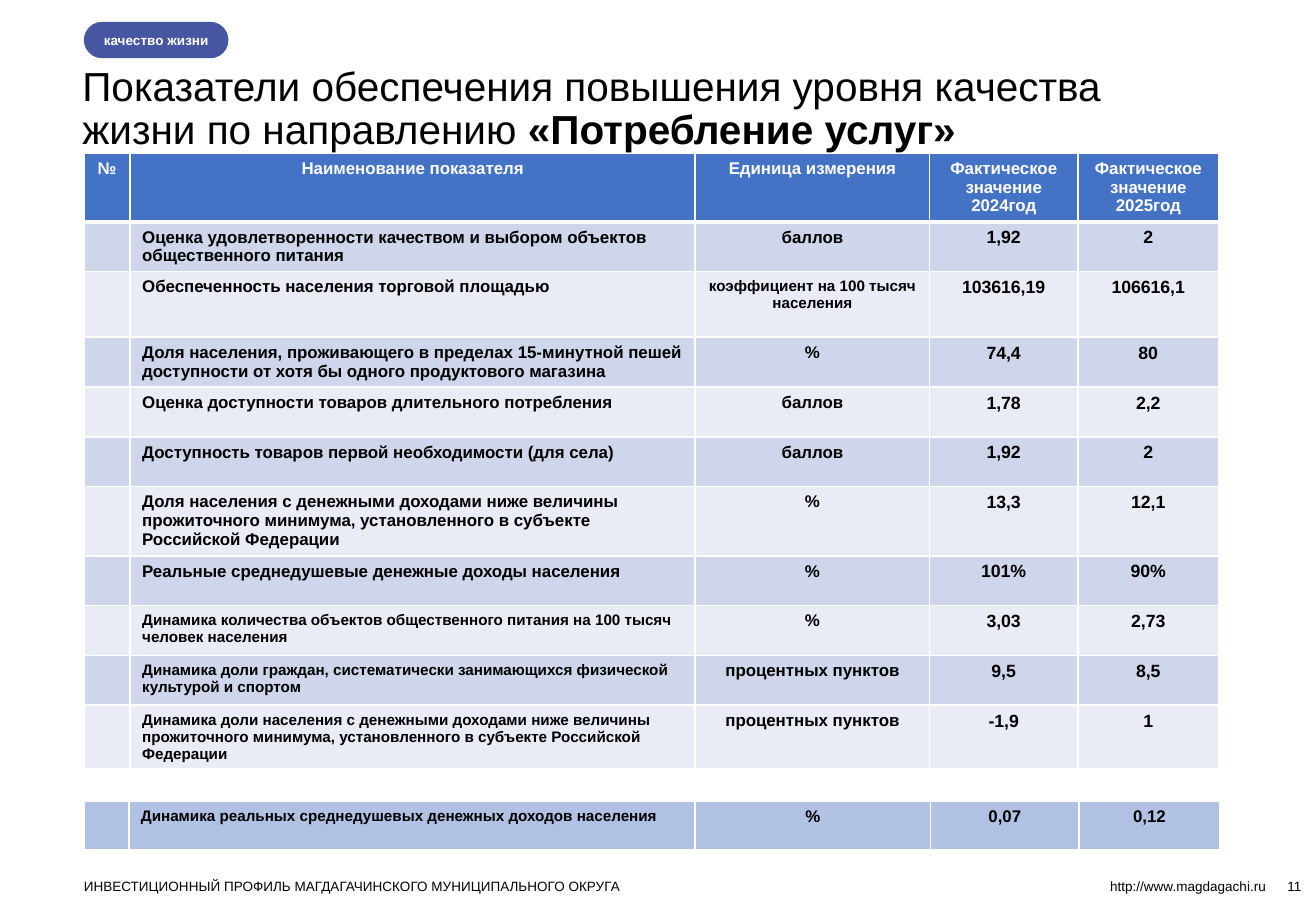
from pptx import Presentation
from pptx.dml.color import RGBColor
from pptx.enum.shapes import MSO_SHAPE
from pptx.enum.text import MSO_ANCHOR, PP_ALIGN
from pptx.oxml import parse_xml
from pptx.oxml.ns import nsdecls
from pptx.util import Pt

SECTION = "качество жизни"
TITLE = [
    ("Показатели обеспечения повышения уровня качества жизни по направлению ", False),
    ("«Потребление услуг»", True),
]
HEADINGS = ("№", "Наименование показателя", "Единица измерения",
            "Фактическое значение 2024год", "Фактическое значение 2025год")
INDICATORS = [
    ("Оценка удовлетворенности качеством и выбором объектов общественного питания",
     "баллов", "1,92", "2"),
    ("Обеспеченность населения торговой площадью",
     "коэффициент на 100 тысяч населения", "103616,19", "106616,1"),
    ("Доля населения, проживающего в пределах 15-минутной пешей доступности "
     "от хотя бы одного продуктового магазина", "%", "74,4", "80"),
    ("Оценка доступности товаров длительного потребления", "баллов", "1,78", "2,2"),
    ("Доступность товаров первой необходимости (для села)", "баллов", "1,92", "2"),
    ("Доля населения с денежными доходами ниже величины прожиточного минимума, "
     "установленного в субъекте Российской Федерации", "%", "13,3", "12,1"),
    ("Реальные среднедушевые денежные доходы населения", "%", "101%", "90%"),
    ("Динамика количества объектов общественного питания на 100 тысяч человек населения",
     "%", "3,03", "2,73"),
    ("Динамика доли граждан, систематически занимающихся физической культурой и спортом",
     "процентных пунктов", "9,5", "8,5"),
    ("Динамика доли населения с денежными доходами ниже величины прожиточного минимума, "
     "установленного в субъекте Российской Федерации", "процентных пунктов", "-1,9", "1"),
]
INCOME_TREND = ("Динамика реальных среднедушевых денежных доходов населения",
                "%", "0,07", "0,12")
FOOTER = "ИНВЕСТИЦИОННЫЙ ПРОФИЛЬ МАГДАГАЧИНСКОГО МУНИЦИПАЛЬНОГО ОКРУГА"
SITE = "http://www.magdagachi.ru"
PAGE = "11"

THEME = {
    "font": "Arial", "ink": "000000", "white": "FFFFFF", "section": "4756A0",
    "header": "4472C4", "bands": ("CFD5EA", "E9EBF5"), "trend": "B1C1E4",
    "title_size": 24, "value_size": 10.5, "table_size": 10, "compact_size": 9, "small_size": 8,
}
PX = 9144
SLIDE = (1083, 750)
LEFT = 69
INDICATOR_TOP, TREND_TOP = 126, 660
INDICATOR_COLUMNS = (38, 465, 193, 122, 116)
TREND_COLUMNS = (37, 466, 194, 122, 116)
ROW = 41
INDICATOR_ROWS = (56, ROW, 54, ROW, ROW, ROW, 57, ROW, ROW, ROW, 52)
FOOTER_TOP, FOOTER_HEIGHT = 723, 13
THIN, THICK = 1, 3


def px(*lengths):
    return [length * PX for length in lengths]


def assign(target, values):
    for name, value in values.items():
        setattr(target, name, value)


def write(paragraph, text, size, color=THEME["ink"], bold=False):
    run = paragraph.add_run()
    run.text = text
    assign(run.font, {"name": THEME["font"], "size": Pt(size), "bold": bold})
    run.font.color.rgb = RGBColor.from_string(color)


def set_frame(frame, anchor, insets):
    sides = ("margin_left", "margin_top", "margin_right", "margin_bottom")
    assign(frame, {"word_wrap": True, "vertical_anchor": anchor, **dict(zip(sides, px(*insets)))})
    return frame.paragraphs[0]


def add_label(place, anchor, insets, align):
    label = slide.shapes.add_textbox(*px(*place))
    paragraph = set_frame(label.text_frame, anchor, insets)
    paragraph.alignment = align
    return paragraph


def set_borders(cell, top, bottom):
    properties = cell._tc.get_or_add_tcPr()
    widths = {"lnL": THIN, "lnR": THIN, "lnT": top, "lnB": bottom}
    for place, (side, width) in enumerate(widths.items()):
        properties.insert(place, parse_xml(
            f'<a:{side} {nsdecls("a")} w="{Pt(width)}"><a:solidFill>'
            f'<a:srgbClr val="{THEME["white"]}"/></a:solidFill></a:{side}>'))


def add_grid(top, columns, heights):
    grid = slide.shapes.add_table(len(heights), len(columns),
                                  *px(LEFT, top, sum(columns), sum(heights))).table
    assign(grid, {"first_row": False, "horz_banding": False})
    for column, width in zip(grid.columns, columns):
        column.width = width * PX
    for row, height in zip(grid.rows, heights):
        row.height = height * PX
    return grid


def fill_row(row, texts, sizes, fill, color=THEME["ink"], centered=(0, 2, 3, 4),
             top=THIN, bottom=THIN):
    for index, (cell, text, size) in enumerate(zip(row.cells, texts, sizes)):
        cell.fill.solid()
        cell.fill.fore_color.rgb = RGBColor.from_string(fill)
        set_borders(cell, top, bottom)
        paragraph = cell.text_frame.paragraphs[0]
        paragraph.alignment = PP_ALIGN.CENTER if index in centered else PP_ALIGN.LEFT
        if text:
            write(paragraph, text, size, color, True)


deck = Presentation()
assign(deck, dict(zip(("slide_width", "slide_height"), px(*SLIDE))))
slide = deck.slides.add_slide(deck.slide_layouts[6])

regular, compact, value = THEME["table_size"], THEME["compact_size"], THEME["value_size"]
indicators = add_grid(INDICATOR_TOP, INDICATOR_COLUMNS, INDICATOR_ROWS)
fill_row(indicators.rows[0], HEADINGS, [regular] * 5, THEME["header"], THEME["white"],
         range(5), bottom=THICK)
for number, indicator in enumerate(INDICATORS):
    name_size = compact if number >= 7 else regular
    unit_size = compact if number == 1 else regular
    fill_row(indicators.rows[number + 1], ("", *indicator),
             (regular, name_size, unit_size, value, value),
             THEME["bands"][number % 2], top=THIN if number else THICK)

section = slide.shapes.add_shape(MSO_SHAPE.ROUNDED_RECTANGLE, *px(LEFT, 18, 119, 30))
section.adjustments[0] = 0.5
section.shadow.inherit = False
section.fill.solid()
section.fill.fore_color.rgb = RGBColor.from_string(THEME["section"])
section.line.fill.background()
section_line = set_frame(section.text_frame, MSO_ANCHOR.MIDDLE, (12, 0, 0, 0))
section_line.alignment = PP_ALIGN.LEFT
write(section_line, SECTION, THEME["small_size"], THEME["white"], True)

title = add_label((58, 18, 934, 145), MSO_ANCHOR.MIDDLE, (10, 5, 10, 5), PP_ALIGN.LEFT)
title.line_spacing = 0.9
for phrase, bold in TITLE:
    write(title, phrase, THEME["title_size"], bold=bold)

trend = add_grid(TREND_TOP, TREND_COLUMNS, (ROW,))
fill_row(trend.rows[0], ("", *INCOME_TREND), (regular, compact, regular, regular, regular),
         THEME["trend"], bottom=THICK)

for text, left, width, anchor, align in (
    (FOOTER, LEFT, 800, MSO_ANCHOR.TOP, PP_ALIGN.LEFT),
    (SITE, 869, 173, MSO_ANCHOR.TOP, PP_ALIGN.RIGHT),
    (PAGE, 991, 80, MSO_ANCHOR.BOTTOM, PP_ALIGN.RIGHT),
):
    label = add_label((left, FOOTER_TOP, width, FOOTER_HEIGHT), anchor, (0, 0, 0, 0), align)
    write(label, text, THEME["small_size"])

deck.save("out.pptx")
